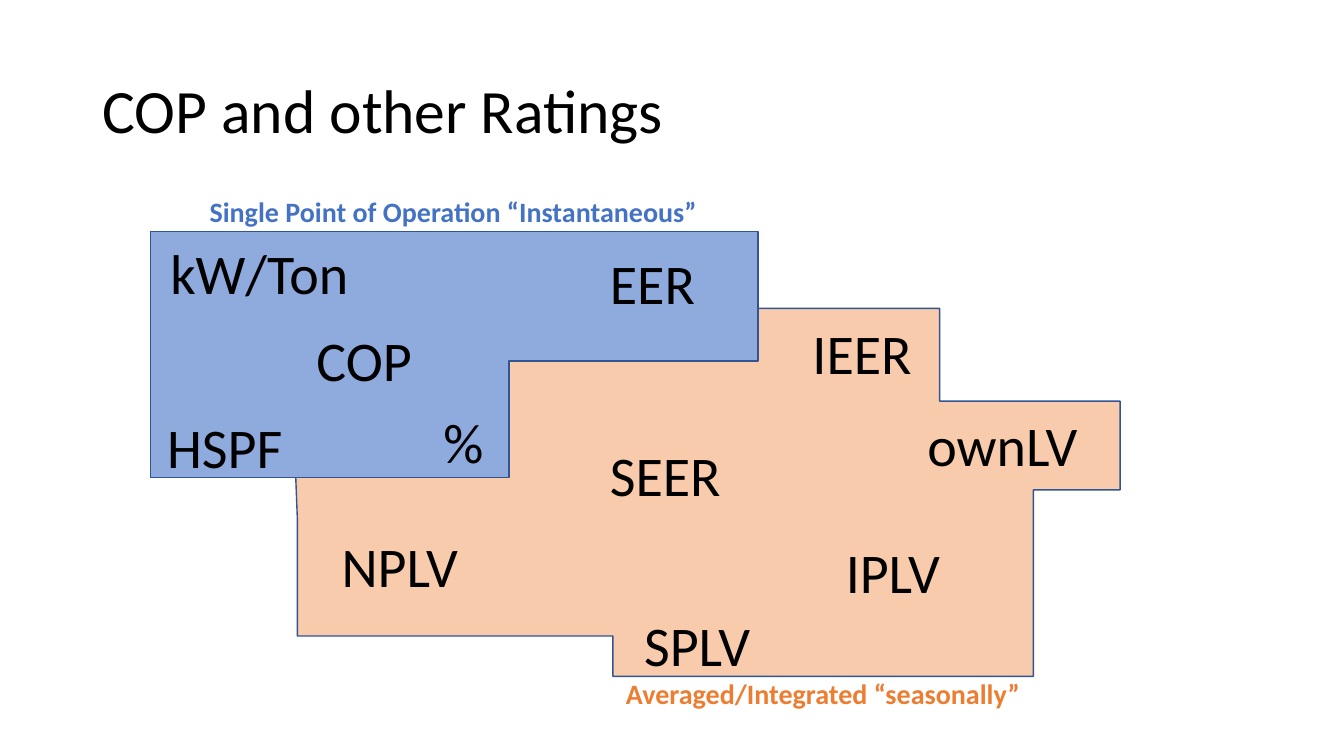
"""Build the slide that sorts efficiency ratings into two regions."""
from pptx import Presentation
from pptx.dml.color import RGBColor
from pptx.enum.text import MSO_ANCHOR
from pptx.util import Pt

PX = 9144
SLIDE = (1333, 750)
FONT = "Calibri"
COLORS = {
    "text": "000000",
    "outline": "325491",
    "seasonal_fill": "F8CBAD",
    "instant_fill": "8FAADC",
    "seasonal": "ED7D31",
    "instant": "4472C4",
}

TITLE = ("COP and other Ratings", (92, 40, 1150, 145))
REGIONS = [
    ("seasonal_fill", [
        (295, 515), (295, 631), (608, 631), (608, 671), (1025, 671),
        (1025, 486), (1111, 486), (1111, 398), (932, 398), (932, 306),
        (301, 306), (301, 412), (291, 412),
    ]),
    ("instant_fill", [
        (149, 230), (752, 230), (752, 358), (505, 358), (505, 474), (149, 474),
    ]),
]
RATING_HEIGHT = 77
RATINGS = [
    ("kW/Ton", 159, 232, 199),
    ("COP", 304, 318, 116),
    ("EER", 595, 242, 105),
    ("SEER", 595, 432, 131),
    ("IEER", 796, 311, 120),
    ("NPLV", 329, 522, 137),
    ("IPLV", 829, 528, 115),
    ("SPLV", 629, 601, 126),
    ("%", 430, 399, 60),
    ("HSPF", 156, 404, 136),
    ("ownLV", 910, 402, 170),
]
CAPTIONS = [
    ("Single Point of Operation “Instantaneous”", (198, 188, 508, 44), "instant"),
    ("Averaged/Integrated “seasonally”", (611, 666, 415, 44), "seasonal"),
]


def rgb(name):
    """Return the named colour."""
    return RGBColor.from_string(COLORS[name])


def add_text(s, text, box, size=40, color="text", bold=False, wrap=False,
             anchor=MSO_ANCHOR.TOP, spacing=None):
    """Add one line of text in a box given in px."""
    tf = s.shapes.add_textbox(*(v * PX for v in box)).text_frame
    tf.word_wrap = wrap
    tf.vertical_anchor = anchor
    p = tf.paragraphs[0]
    p.line_spacing = spacing
    r = p.add_run()
    r.text = text
    r.font.name = FONT
    r.font.size = Pt(size)
    r.font.bold = bold
    r.font.color.rgb = rgb(color)


def add_region(s, fill, points):
    """Add a closed outline through the points."""
    builder = s.shapes.build_freeform(*points[0], scale=PX)
    builder.add_line_segments(points[1:], close=True)
    sp = builder.convert_to_shape()
    sp.shadow.inherit = False
    sp.fill.solid()
    sp.fill.fore_color.rgb = rgb(fill)
    sp.line.color.rgb = rgb("outline")
    sp.line.width = Pt(1)


def main():
    """Build and save the slide."""
    prs = Presentation()
    prs.slide_width, prs.slide_height = (v * PX for v in SLIDE)
    s = prs.slides.add_slide(prs.slide_layouts[6])
    for fill, points in REGIONS:
        add_region(s, fill, points)
    text, box = TITLE
    add_text(s, text, box, size=44, wrap=True, anchor=MSO_ANCHOR.MIDDLE, spacing=0.9)
    for text, left, top, width in RATINGS:
        add_text(s, text, (left, top, width, RATING_HEIGHT))
    for text, box, color in CAPTIONS:
        add_text(s, text, box, size=20, color=color, bold=True)
    prs.save("out.pptx")


if __name__ == "__main__":
    main()
